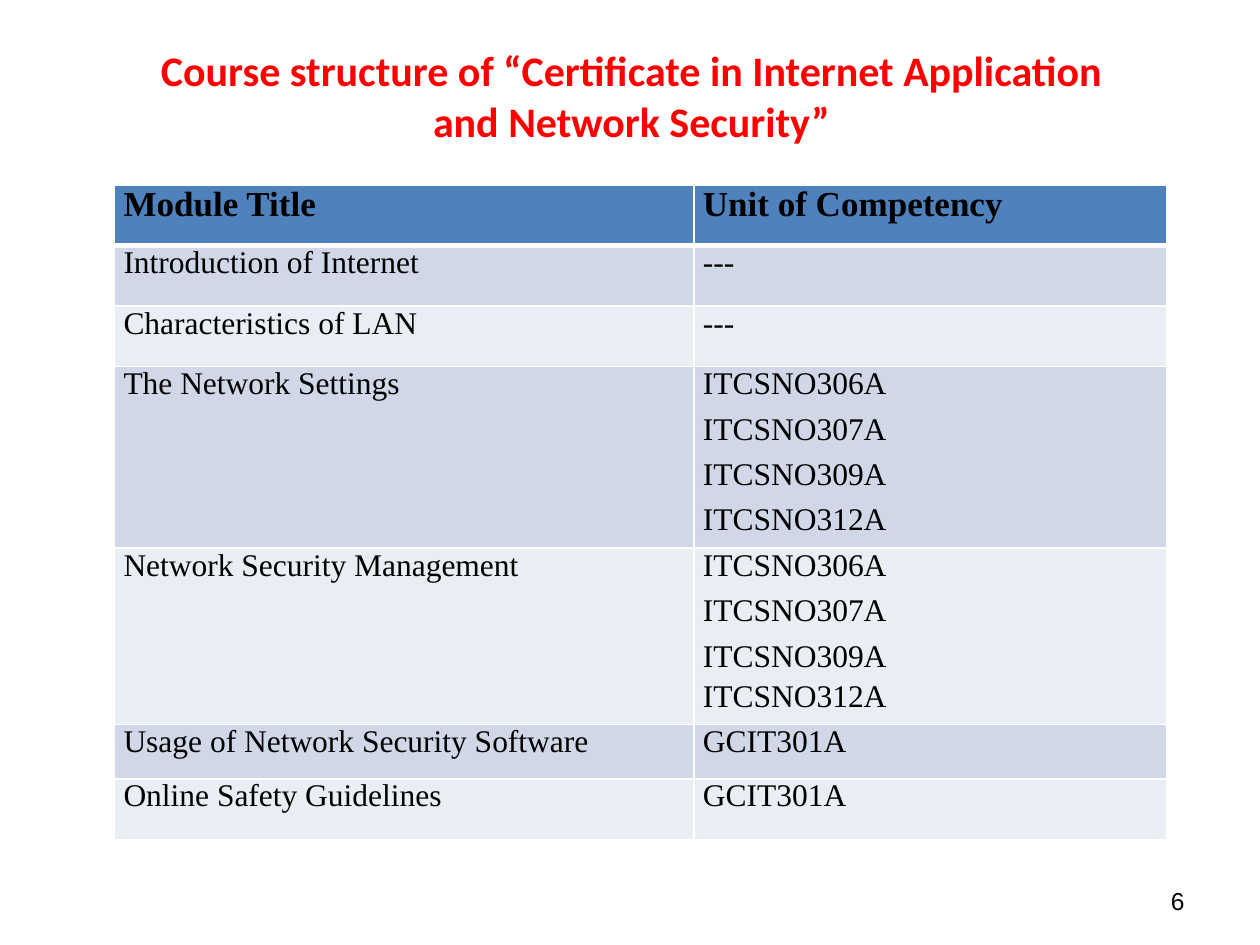
from typing import NamedTuple

from lxml import etree
from pptx import Presentation
from pptx.dml.color import RGBColor
from pptx.enum.text import MSO_ANCHOR, PP_ALIGN
from pptx.oxml.ns import qn
from pptx.util import Cm, Pt

CENTER, RIGHT = PP_ALIGN.CENTER, PP_ALIGN.RIGHT
MIDDLE, TOP = MSO_ANCHOR.MIDDLE, MSO_ANCHOR.TOP
TITLE_ONLY = 5

WHITE, BLACK, RED = "FFFFFF", "000000", "FF0000"
HEADER_FILL = "4F81BD"
BAND_FILLS = ("D0D8E8", "E9EDF4")
COLUMN_WIDTHS = (11.68, 9.53)


class Module(NamedTuple):
    title: str
    units: tuple[str, ...]
    height: float = 1.22
    spacing: tuple[float, ...] = (0,)  # points around each unit


NETWORK_UNITS = ("ITCSNO306A", "ITCSNO307A", "ITCSNO309A", "ITCSNO312A")
MODULES = (
    Module("Introduction of Internet", ("---",), spacing=(3,)),
    Module("Characteristics of LAN", ("---",), spacing=(3,)),
    Module("The Network Settings", NETWORK_UNITS, 3.66, (3, 3, 3, 3)),
    Module("Network Security Management", NETWORK_UNITS, 3.56, (3, 3, 3, 0)),
    Module("Usage of Network Security Software", ("GCIT301A",), 1.09),
    Module("Online Safety Guidelines", ("GCIT301A",)),
)


def color(value: str) -> RGBColor:
    return RGBColor.from_string(value)


def set_font(paragraph, name: str, size: float, value: str, bold: bool = False) -> None:
    font = paragraph.font
    font.name, font.size, font.bold = name, Pt(size), bold
    font.color.rgb = color(value)


def set_borders(cell, bottom_width: float) -> None:
    """Give the cell white borders; call before setting its fill."""
    properties = cell._tc.get_or_add_tcPr()
    for tag, width in (("lnL", 1), ("lnR", 1), ("lnT", 1), ("lnB", bottom_width)):
        line = etree.SubElement(properties, qn(f"a:{tag}"), w=str(Pt(width)))
        fill = etree.SubElement(line, qn("a:solidFill"))
        etree.SubElement(fill, qn("a:srgbClr"), val=WHITE)


def fill_cell(cell, lines: tuple[str, ...], spacing: tuple[float, ...],
              fill: str, header: bool = False) -> None:
    set_borders(cell, 3 if header else 1)
    cell.fill.solid()
    cell.fill.fore_color.rgb = color(fill)
    cell.margin_left = cell.margin_right = Cm(0.18)
    cell.margin_top = cell.margin_bottom = 0
    cell.vertical_anchor = TOP
    cell.text = "\n".join(lines)
    for index, (paragraph, gap) in enumerate(zip(cell.text_frame.paragraphs, spacing)):
        paragraph.space_before = Pt(gap if index else 0)
        paragraph.space_after = Pt(gap)
        set_font(paragraph, "Times New Roman", 20 if header else 18, BLACK, header)


def add_title(slide) -> None:
    title = slide.shapes.title
    title.left, title.top, title.width, title.height = Cm(1.3), Cm(0.33), Cm(22.86), Cm(3.18)
    frame = title.text_frame
    frame.vertical_anchor = MIDDLE
    frame.text = "Course structure of “Certificate in Internet Application\vand Network Security”"
    paragraph = frame.paragraphs[0]
    paragraph.alignment = CENTER
    set_font(paragraph, "Calibri", 24, RED, True)


def add_module_table(slide) -> None:
    header = Module("Module Title", ("Unit of Competency",))
    rows = (header, *MODULES)
    table = slide.shapes.add_table(
        len(rows), len(COLUMN_WIDTHS), Cm(2.31), Cm(3.73),
        Cm(sum(COLUMN_WIDTHS)), Cm(sum(row.height for row in rows))).table
    for column, width in zip(table.columns, COLUMN_WIDTHS):
        column.width = Cm(width)
    for index, module in enumerate(rows):
        table.rows[index].height = Cm(module.height)
        is_header = index == 0
        fill = HEADER_FILL if is_header else BAND_FILLS[(index - 1) % 2]
        fill_cell(table.cell(index, 0), (module.title,), (0,), fill, is_header)
        fill_cell(table.cell(index, 1), module.units, module.spacing, fill, is_header)


def add_page_number(slide) -> None:
    frame = slide.shapes.add_textbox(Cm(18.21), Cm(17.65), Cm(5.92), Cm(1.02)).text_frame
    frame.word_wrap = True
    frame.vertical_anchor = MIDDLE
    frame.text = "6"
    paragraph = frame.paragraphs[0]
    paragraph.alignment = RIGHT
    set_font(paragraph, "Arial", 14, BLACK)


def main() -> None:
    presentation = Presentation()
    presentation.slide_width, presentation.slide_height = Cm(25.4), Cm(19.05)
    slide = presentation.slides.add_slide(presentation.slide_layouts[TITLE_ONLY])
    add_title(slide)
    add_module_table(slide)
    add_page_number(slide)
    presentation.save("out.pptx")


if __name__ == "__main__":
    main()
